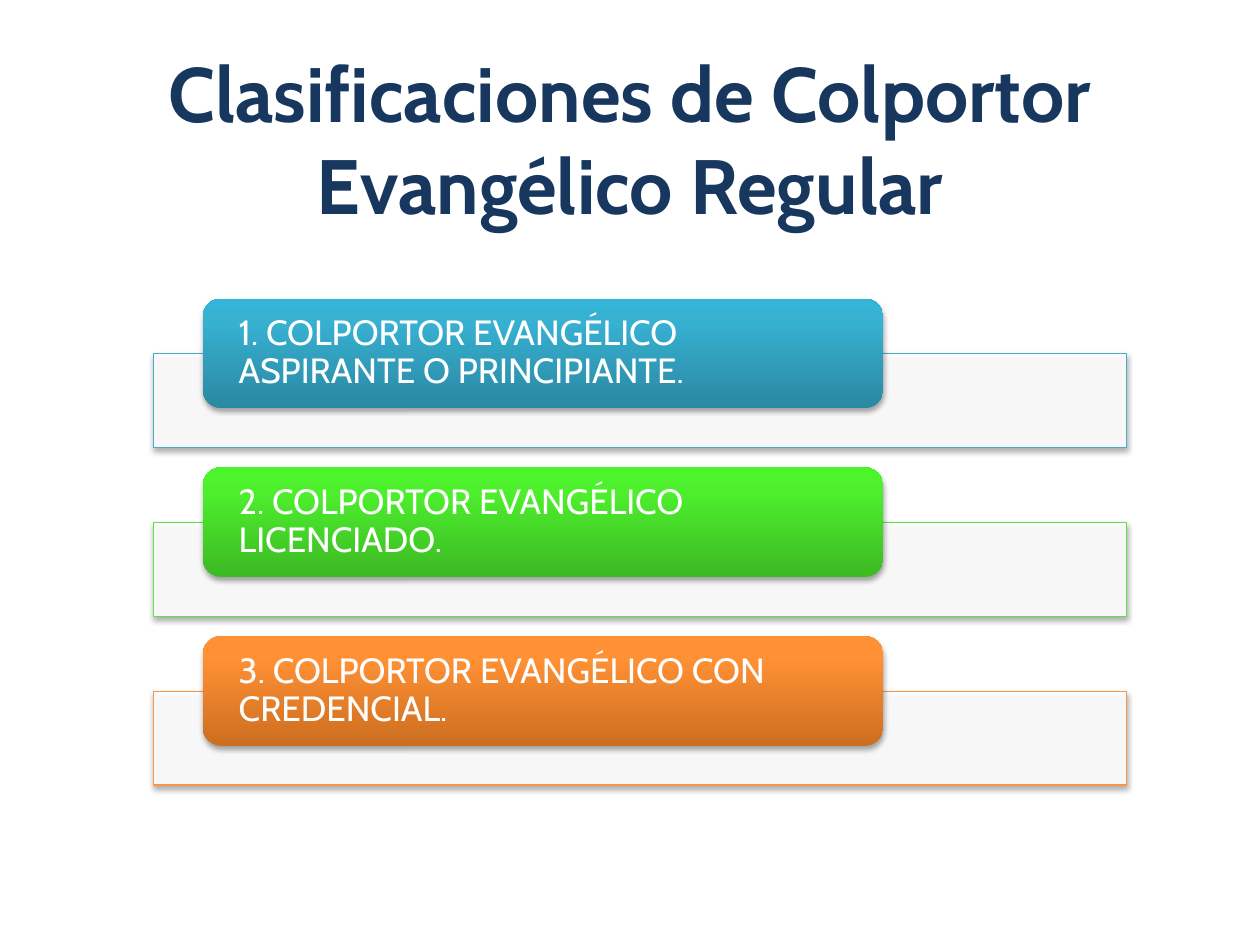
from dataclasses import dataclass

from lxml import etree
from pptx import Presentation
from pptx.dml.color import RGBColor
from pptx.enum.shapes import MSO_SHAPE
from pptx.enum.text import MSO_ANCHOR, MSO_AUTO_SIZE, PP_ALIGN
from pptx.oxml.ns import qn
from pptx.util import Pt

RECTANGLE = MSO_SHAPE.RECTANGLE
ROUNDED = MSO_SHAPE.ROUNDED_RECTANGLE
MIDDLE = MSO_ANCHOR.MIDDLE
TOP = MSO_ANCHOR.TOP
LEFT = PP_ALIGN.LEFT
CENTER = PP_ALIGN.CENTER
NO_FIT = MSO_AUTO_SIZE.NONE

FIRST_TAB_TOP = 170.64
ROW_PITCH = 96.48
BAR_OFFSET = 31.54
TITLE_FONT = {"name": "Cabin", "size": Pt(44), "bold": True}
LABEL_FONT = {"name": "Cabin", "size": Pt(20), "bold": False}
TITLE_FRAME = {"word_wrap": True, "auto_size": NO_FIT, "vertical_anchor": TOP}
LABEL_FRAME = {
    "word_wrap": True,
    "auto_size": NO_FIT,
    "vertical_anchor": MIDDLE,
    "margin_left": Pt(17.5),
    "margin_right": Pt(17.5),
    "margin_top": Pt(3),
    "margin_bottom": Pt(3),
}


@dataclass
class Category:
    label: str
    outline: str
    gradient: tuple[str, str, str]


CATEGORIES = [
    Category("1. COLPORTOR EVANGÉLICO ASPIRANTE O PRINCIPIANTE.",
             "4BACC6", ("2A88A2", "37B1D2", "34B4D6")),
    Category("2. COLPORTOR EVANGÉLICO LICENCIADO.",
             "60E146", ("3CB923", "4EF02E", "4CF52A")),
    Category("3. COLPORTOR EVANGÉLICO CON CREDENCIAL.",
             "F79646", ("CC6E20", "FF9034", "FF9136")),
]


def color(value: str) -> RGBColor:
    return RGBColor.from_string(value)


def apply(target, values: dict) -> None:
    for name, value in values.items():
        setattr(target, name, value)


def add_xml_color(parent, value: str, alpha: int = 100) -> None:
    element = etree.SubElement(parent, qn("a:srgbClr"), val=value)
    if alpha < 100:
        etree.SubElement(element, qn("a:alpha"), val=str(alpha * 1000))


def add_shadow(shape) -> None:
    shape.shadow.inherit = False
    effects = shape._element.spPr.find(qn("a:effectLst"))
    shadow = etree.SubElement(
        effects, qn("a:outerShdw"), blurRad=str(Pt(3.1)),
        dist=str(Pt(1.8)), dir="5400000", rotWithShape="0")
    add_xml_color(shadow, "000000", 35)


def write(frame, text: str, values: dict, font: dict, ink: str, alignment):
    apply(frame, values)
    paragraph = frame.paragraphs[0]
    paragraph.alignment = alignment
    span = paragraph.add_run()
    span.text = text
    apply(span.font, font)
    span.font.color.rgb = color(ink)
    return paragraph


def add_bar(page, top: float, outline: str) -> None:
    bar = page.shapes.add_shape(
        RECTANGLE, Pt(87.84), Pt(top), Pt(555.84), Pt(53.5))
    bar.fill.solid()
    bar.fill.fore_color.rgb = color("FFFFFF")
    fill_color = bar._element.spPr.find(qn("a:solidFill"))[0]
    etree.SubElement(fill_color, qn("a:alpha"), val="90000")
    bar.line.color.rgb = color(outline)
    bar.line.width = Pt(0.75)
    add_shadow(bar)


def add_tab(page, top: float, category: Category) -> None:
    tab = page.shapes.add_shape(
        ROUNDED, Pt(115.92), Pt(top), Pt(388.8), Pt(62.64))
    tab.fill.gradient()
    tab.fill.gradient_angle = 90
    stops = tab._element.spPr.find(qn("a:gradFill")).find(qn("a:gsLst"))
    for stop in list(stops):
        stops.remove(stop)
    for position, value in zip((0, 80, 100), category.gradient):
        stop = etree.SubElement(stops, qn("a:gs"), pos=str(position * 1000))
        add_xml_color(stop, value)
    tab.line.fill.background()
    add_shadow(tab)
    paragraph = write(tab.text_frame, category.label, LABEL_FRAME,
                      LABEL_FONT, "FFFFFF", LEFT)
    paragraph.line_spacing = 0.9


def add_title(page, text: str) -> None:
    title = page.shapes.title
    apply(title, {"left": Pt(42.48), "top": Pt(22.32),
                  "width": Pt(635.04), "height": Pt(113.76)})
    write(title.text_frame, text, TITLE_FRAME, TITLE_FONT, "17375E", CENTER)


def main() -> None:
    deck = Presentation()
    apply(deck, {"slide_width": Pt(720), "slide_height": Pt(540)})
    page = deck.slides.add_slide(deck.slide_layouts[5])
    add_title(page, "Clasificaciones de Colportor Evangélico Regular")
    for row, category in enumerate(CATEGORIES):
        top = FIRST_TAB_TOP + row * ROW_PITCH
        add_bar(page, top + BAR_OFFSET, category.outline)
        add_tab(page, top, category)
    deck.save("out.pptx")


if __name__ == "__main__":
    main()
